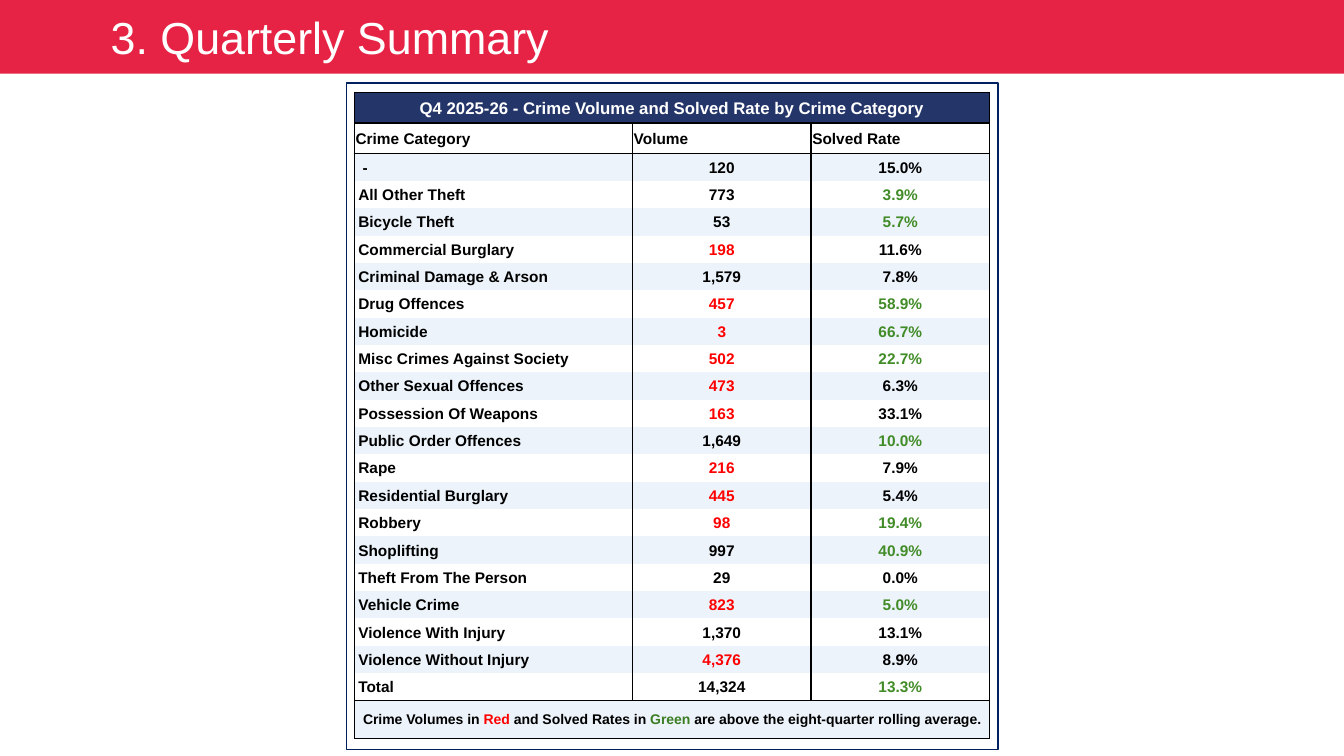
from lxml import etree
from pptx import Presentation
from pptx.dml.color import RGBColor
from pptx.enum.shapes import MSO_SHAPE
from pptx.enum.text import MSO_ANCHOR, PP_ALIGN
from pptx.oxml.ns import qn
from pptx.util import Cm, Pt

RECTANGLE = MSO_SHAPE.RECTANGLE
MIDDLE = MSO_ANCHOR.MIDDLE
LEFT, CENTER = PP_ALIGN.LEFT, PP_ALIGN.CENTER

BLACK = RGBColor(0x00, 0x00, 0x00)
WHITE = RGBColor(0xFF, 0xFF, 0xFF)
BANNER_RED = RGBColor(0xE6, 0x23, 0x44)
FRAME_NAVY = RGBColor(0x00, 0x20, 0x60)
TITLE_NAVY = RGBColor(0x24, 0x35, 0x69)
BAND_BLUE = RGBColor(0xEC, 0xF3, 0xFA)
RED = RGBColor(0xFF, 0x00, 0x00)
GREEN = RGBColor(0x42, 0x8C, 0x28)
NOTE_GREEN = RGBColor(0x3B, 0x7D, 0x23)

# Category, volume, solved rate, above-average marks (V = volume, S = solved rate)
CRIMES = [
    (" -", "120", "15.0%", ""),
    ("All Other Theft", "773", "3.9%", "S"),
    ("Bicycle Theft", "53", "5.7%", "S"),
    ("Commercial Burglary", "198", "11.6%", "V"),
    ("Criminal Damage & Arson", "1,579", "7.8%", ""),
    ("Drug Offences", "457", "58.9%", "VS"),
    ("Homicide", "3", "66.7%", "VS"),
    ("Misc Crimes Against Society", "502", "22.7%", "VS"),
    ("Other Sexual Offences", "473", "6.3%", "V"),
    ("Possession Of Weapons", "163", "33.1%", "V"),
    ("Public Order Offences", "1,649", "10.0%", "S"),
    ("Rape", "216", "7.9%", "V"),
    ("Residential Burglary", "445", "5.4%", "V"),
    ("Robbery", "98", "19.4%", "VS"),
    ("Shoplifting", "997", "40.9%", "S"),
    ("Theft From The Person", "29", "0.0%", ""),
    ("Vehicle Crime", "823", "5.0%", "VS"),
    ("Violence With Injury", "1,370", "13.1%", ""),
    ("Violence Without Injury", "4,376", "8.9%", "V"),
    ("Total", "14,324", "13.3%", "S"),
]


def add_text(paragraph, text, size=11, color=BLACK, bold=True, align=LEFT):
    paragraph.alignment = align
    run = paragraph.add_run()
    run.text = text
    run.font.name = "Arial"
    run.font.size = Pt(size)
    run.font.bold = bold
    run.font.color.rgb = color


def format_cell(cell, fill, edges="LRTB", left_inset=0.03):
    """Set insets, fill and 1 pt black borders on the named edges."""
    cell.vertical_anchor = MIDDLE
    cell.margin_left = Cm(left_inset)
    cell.margin_right = cell.margin_top = Cm(0.03)
    cell.margin_bottom = 0
    properties = cell._tc.get_or_add_tcPr()
    for edge in "LRTB":
        line = etree.SubElement(properties, qn(f"a:ln{edge}"), w=str(Pt(1)))
        if edge in edges:
            color = etree.SubElement(line, qn("a:solidFill"))
            etree.SubElement(color, qn("a:srgbClr"), val=str(BLACK))
        else:
            etree.SubElement(line, qn("a:noFill"))
    cell.fill.solid()
    cell.fill.fore_color.rgb = fill


presentation = Presentation()
presentation.slide_width = Cm(33.87)
presentation.slide_height = Cm(19.05)
slide = presentation.slides.add_slide(presentation.slide_layouts[6])

frame = slide.shapes.add_shape(RECTANGLE, Cm(8.73), Cm(2.1), Cm(16.42), Cm(16.79))
frame.shadow.inherit = False
frame.fill.background()
frame.line.color.rgb = FRAME_NAVY
frame.line.width = Pt(1.25)

banner = slide.shapes.add_shape(RECTANGLE, 0, 0, Cm(33.87), Cm(1.86))
banner.shadow.inherit = False
banner.fill.solid()
banner.fill.fore_color.rgb = BANNER_RED
banner.line.fill.background()
banner.text_frame.vertical_anchor = MIDDLE
banner.text_frame.margin_left = Cm(2.79)
add_text(banner.text_frame.paragraphs[0], "3. Quarterly Summary",
         size=32, color=WHITE, bold=False)

column_widths = [7.01, 4.5, 4.5]
row_heights = [0.77, 0.77] + [0.69] * len(CRIMES) + [0.96]
table = slide.shapes.add_table(
    len(row_heights), len(column_widths), Cm(8.93), Cm(2.33),
    Cm(sum(column_widths)), Cm(sum(row_heights))).table
table.first_row = table.horz_banding = False
for column, width in zip(table.columns, column_widths):
    column.width = Cm(width)
for row, height in zip(table.rows, row_heights):
    row.height = Cm(height)

last_row = len(row_heights) - 1
for row_index, fill in ((0, TITLE_NAVY), (last_row, BAND_BLUE)):
    for column_index in range(3):
        format_cell(table.cell(row_index, column_index), fill)
    table.cell(row_index, 0).merge(table.cell(row_index, 2))

add_text(table.cell(0, 0).text_frame.paragraphs[0],
         "Q4 2025-26 - Crime Volume and Solved Rate by Crime Category",
         size=12, color=WHITE, align=CENTER)

for column_index, heading in enumerate(["Crime Category", "Volume", "Solved Rate"]):
    cell = table.cell(1, column_index)
    format_cell(cell, WHITE)
    add_text(cell.text_frame.paragraphs[0], heading)

for index, (category, volume, rate, marks) in enumerate(CRIMES):
    fill = WHITE if index % 2 else BAND_BLUE
    edges = "LR"
    if index == 0:
        edges += "T"
    if index == len(CRIMES) - 1:
        edges += "B"
    entries = [
        (category, BLACK, LEFT, 0.1),
        (volume, RED if "V" in marks else BLACK, CENTER, 0.03),
        (rate, GREEN if "S" in marks else BLACK, CENTER, 0.03),
    ]
    for column_index, (text, color, align, inset) in enumerate(entries):
        cell = table.cell(index + 2, column_index)
        format_cell(cell, fill, edges, inset)
        add_text(cell.text_frame.paragraphs[0], text, color=color, align=align)

note = table.cell(last_row, 0).text_frame.paragraphs[0]
for text, color in [
    ("Crime Volumes in ", BLACK),
    ("Red", RED),
    (" and Solved Rates in ", BLACK),
    ("Green", NOTE_GREEN),
    (" are above the eight-quarter rolling average.", BLACK),
]:
    add_text(note, text, size=10, color=color, align=CENTER)

presentation.save("out.pptx")
